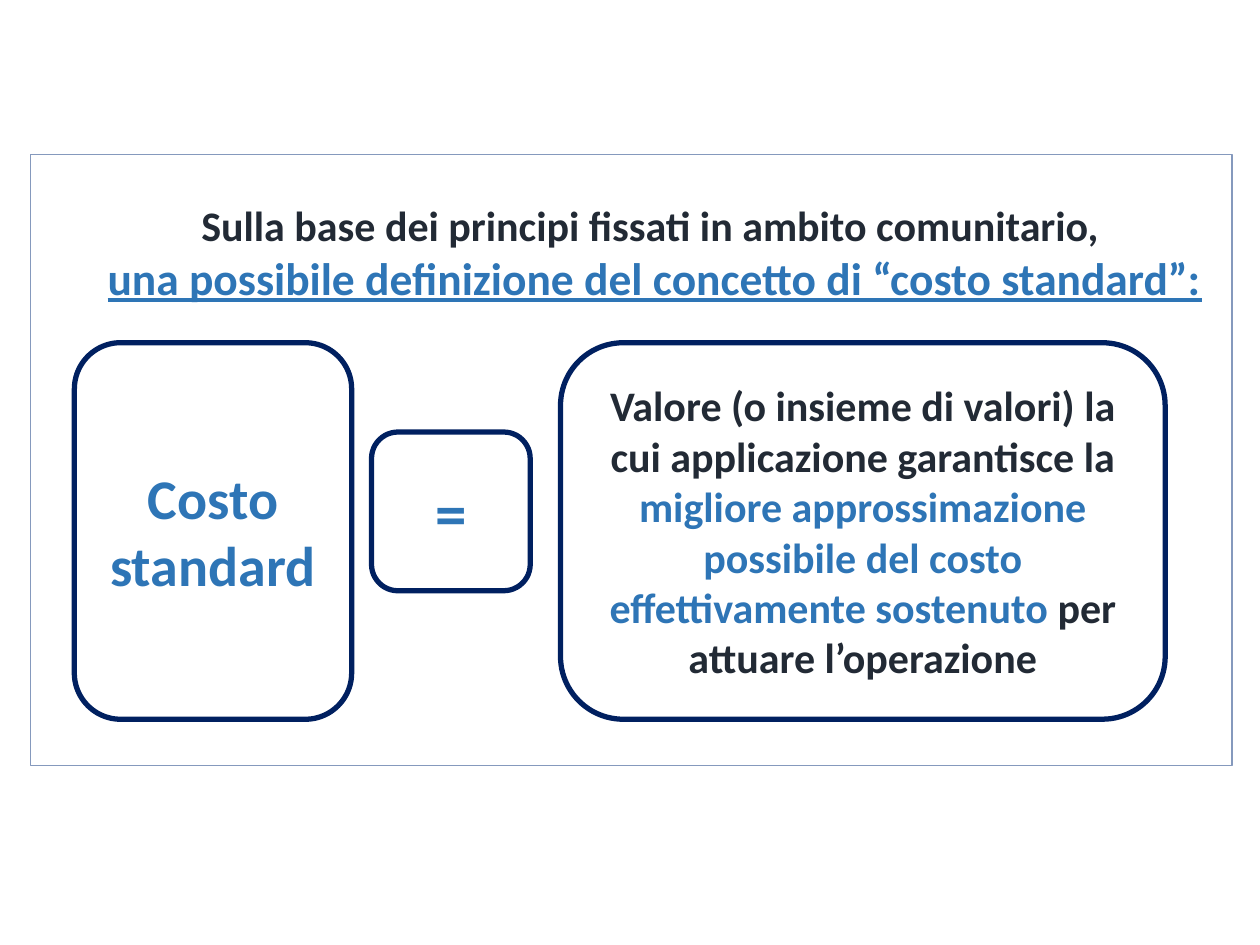
import dataclasses

import pptx
import pptx.dml.color
import pptx.enum.shapes
import pptx.enum.text
import pptx.util

Cm = pptx.util.Cm
Pt = pptx.util.Pt
RGBColor = pptx.dml.color.RGBColor
MSO_SHAPE = pptx.enum.shapes.MSO_SHAPE
MSO_ANCHOR = pptx.enum.text.MSO_ANCHOR

WHITE = RGBColor(0xFF, 0xFF, 0xFF)
BORDER = RGBColor(0x85, 0x99, 0xBD)
NAVY = RGBColor(0x00, 0x20, 0x60)
BLUE = RGBColor(0x2E, 0x75, 0xB6)
DARK = RGBColor(0x22, 0x2A, 0x35)


@dataclasses.dataclass
class Span:
    text: str
    size: int
    color: RGBColor = BLUE
    underline: bool = False


@dataclasses.dataclass
class Box:
    left: float
    top: float
    width: float
    height: float
    paragraphs: list[list[Span]]


FRAME = Box(0.61, 3.12, 24.23, 12.32, [
    [Span("Sulla base dei principi fissati in ambito comunitario, ", 24, DARK)],
    [Span("una possibile definizione del concetto di “costo standard”:", 26, underline=True)],
])

BOXES = [
    Box(1.5, 6.91, 5.59, 7.59, [[Span("Costo standard", 32)]]),
    Box(11.3, 6.91, 12.19, 7.59, [[
        Span("Valore (o insieme di valori) la cui applicazione garantisce la ", 24, DARK),
        Span("migliore approssimazione possibile del costo effettivamente sostenuto ", 24),
        Span("per attuare l’operazione", 24, DARK),
    ]]),
    Box(7.49, 8.71, 3.2, 3.2, [[Span("=", 36)]]),
]


def add_box(slide, box: Box, kind: MSO_SHAPE, line: RGBColor, weight: float):
    """Draw a bordered shape with centred bold text and return it."""
    sp = slide.shapes.add_shape(
        kind, Cm(box.left), Cm(box.top), Cm(box.width), Cm(box.height))
    sp.shadow.inherit = False
    sp.fill.background()
    sp.line.color.rgb = line
    sp.line.width = Pt(weight)
    tf = sp.text_frame
    tf.word_wrap = True
    tf.vertical_anchor = MSO_ANCHOR.MIDDLE
    for i, spans in enumerate(box.paragraphs):
        p = tf.add_paragraph() if i else tf.paragraphs[0]
        p.alignment = pptx.enum.text.PP_ALIGN.CENTER
        for span in spans:
            r = p.add_run()
            r.text = span.text
            r.font.name = "Calibri"
            r.font.size = Pt(span.size)
            r.font.bold = True
            r.font.color.rgb = span.color
            if span.underline:
                r.font.underline = True
    return sp


def main() -> None:
    """Build the standard cost definition slide."""
    prs = pptx.Presentation()
    prs.slide_width, prs.slide_height = Cm(25.4), Cm(19.05)
    s = prs.slides.add_slide(prs.slide_layouts[6])
    frame = add_box(s, FRAME, MSO_SHAPE.RECTANGLE, BORDER, 0.75)
    frame.fill.solid()
    frame.fill.fore_color.rgb = WHITE
    tf = frame.text_frame
    tf.vertical_anchor = MSO_ANCHOR.TOP
    tf.margin_top = Cm(0.9)
    tf.margin_left = Cm(1.21)
    for box in BOXES:
        add_box(s, box, MSO_SHAPE.ROUNDED_RECTANGLE, NAVY, 3)
    prs.save("out.pptx")


if __name__ == "__main__":
    main()
